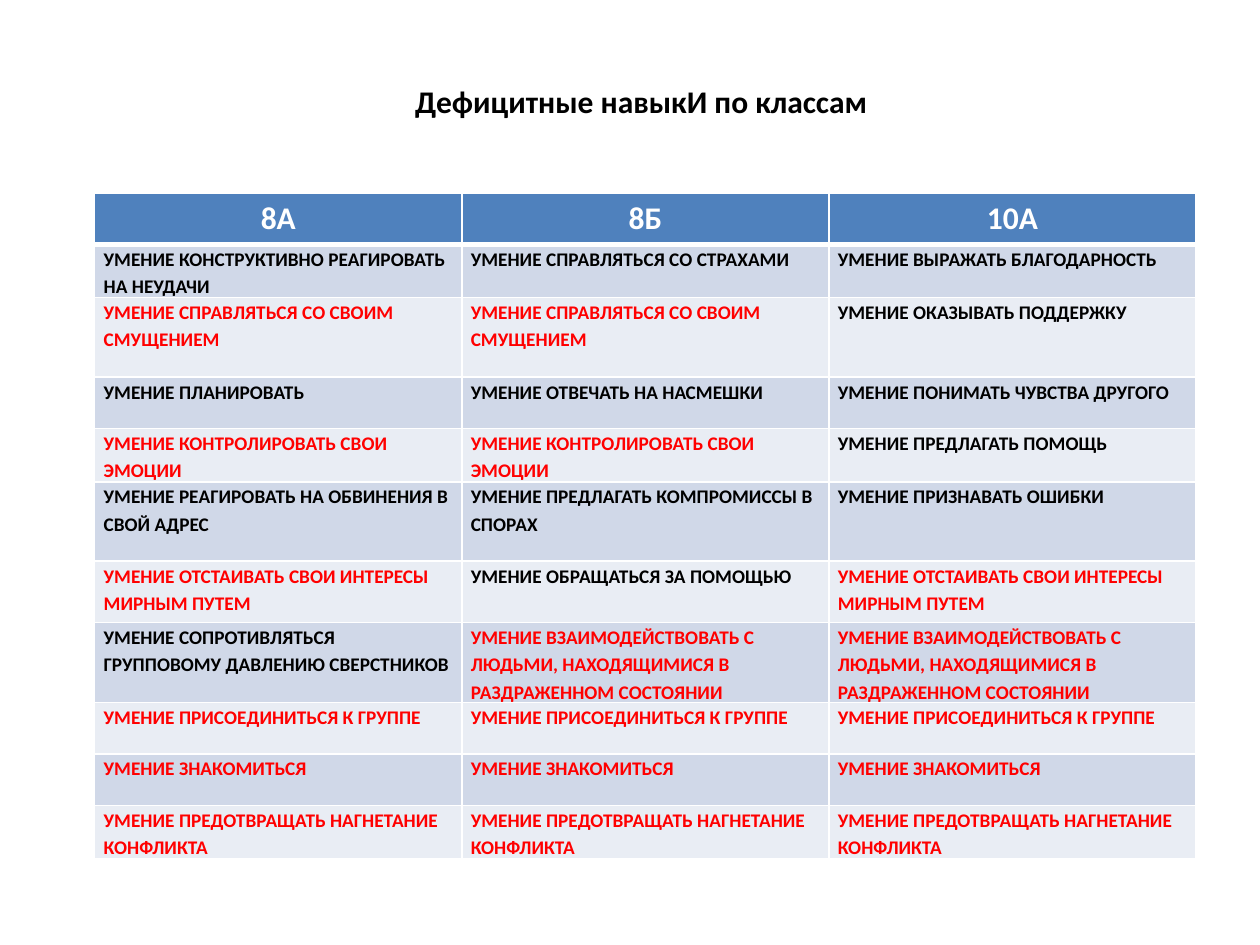
from collections import Counter

from lxml import etree
from pptx import Presentation
from pptx.dml.color import RGBColor
from pptx.enum.text import MSO_ANCHOR, MSO_AUTO_SIZE, PP_ALIGN
from pptx.oxml.ns import qn
from pptx.util import Cm, Pt

LEFT, CENTER = PP_ALIGN.LEFT, PP_ALIGN.CENTER
TOP, MIDDLE = MSO_ANCHOR.TOP, MSO_ANCHOR.MIDDLE
FIT_SHAPE = MSO_AUTO_SIZE.SHAPE_TO_FIT_TEXT

BLACK, WHITE, RED = "000000", "FFFFFF", "FF0000"
HEADER_FILL = "4F81BD"
BAND_FILLS = ("D0D8E8", "E9EDF4")
ROW_HEIGHT = 1.04
ROW_HEIGHTS = {2: 1.6, 5: 1.6, 6: 1.24, 7: 1.6}

CLASSES = ("8А", "8Б", "10А")
EMBARRASSMENT = "УМЕНИЕ СПРАВЛЯТЬСЯ СО СВОИМ СМУЩЕНИЕМ"
EMOTIONS = "УМЕНИЕ КОНТРОЛИРОВАТЬ СВОИ ЭМОЦИИ"
INTERESTS = "УМЕНИЕ ОТСТАИВАТЬ СВОИ ИНТЕРЕСЫ МИРНЫМ ПУТЕМ"
IRRITATED = "УМЕНИЕ ВЗАИМОДЕЙСТВОВАТЬ С ЛЮДЬМИ, НАХОДЯЩИМИСЯ В РАЗДРАЖЕННОМ СОСТОЯНИИ"
SKILLS = [
    ("УМЕНИЕ КОНСТРУКТИВНО РЕАГИРОВАТЬ НА НЕУДАЧИ",
     "УМЕНИЕ СПРАВЛЯТЬСЯ СО СТРАХАМИ",
     "УМЕНИЕ ВЫРАЖАТЬ БЛАГОДАРНОСТЬ"),
    (EMBARRASSMENT, EMBARRASSMENT, "УМЕНИЕ ОКАЗЫВАТЬ ПОДДЕРЖКУ"),
    ("УМЕНИЕ ПЛАНИРОВАТЬ",
     "УМЕНИЕ ОТВЕЧАТЬ НА НАСМЕШКИ",
     "УМЕНИЕ ПОНИМАТЬ ЧУВСТВА ДРУГОГО"),
    (EMOTIONS, EMOTIONS, "УМЕНИЕ ПРЕДЛАГАТЬ ПОМОЩЬ"),
    ("УМЕНИЕ РЕАГИРОВАТЬ НА ОБВИНЕНИЯ В СВОЙ АДРЕС",
     "УМЕНИЕ ПРЕДЛАГАТЬ КОМПРОМИССЫ В СПОРАХ",
     "УМЕНИЕ ПРИЗНАВАТЬ ОШИБКИ"),
    (INTERESTS, "УМЕНИЕ ОБРАЩАТЬСЯ ЗА ПОМОЩЬЮ", INTERESTS),
    ("УМЕНИЕ СОПРОТИВЛЯТЬСЯ ГРУППОВОМУ ДАВЛЕНИЮ СВЕРСТНИКОВ",
     IRRITATED, IRRITATED),
    ("УМЕНИЕ ПРИСОЕДИНИТЬСЯ К ГРУППЕ",) * 3,
    ("УМЕНИЕ ЗНАКОМИТЬСЯ",) * 3,
    ("УМЕНИЕ ПРЕДОТВРАЩАТЬ НАГНЕТАНИЕ КОНФЛИКТА",) * 3,
]


def rgb(color):
    return RGBColor.from_string(color)


def write(tf, text, size=11, color=BLACK, align=LEFT, spacing=1.0):
    p = tf.paragraphs[0]
    p.alignment = align
    p.line_spacing = spacing
    r = p.add_run()
    r.text = text
    r.font.name = "Calibri"
    r.font.size = Pt(size)
    r.font.bold = True
    r.font.color.rgb = rgb(color)


def set_borders(cell, top=1, bottom=1):
    tcPr = cell._tc.get_or_add_tcPr()
    for tag, width in (("lnL", 1), ("lnR", 1), ("lnT", top), ("lnB", bottom)):
        ln = etree.SubElement(tcPr, qn(f"a:{tag}"), w=str(Pt(width)))
        fill = etree.SubElement(ln, qn("a:solidFill"))
        etree.SubElement(fill, qn("a:srgbClr"), val=WHITE)


def paint(cell, color):
    cell.fill.solid()
    cell.fill.fore_color.rgb = rgb(color)


def add_title(s, left, top, width, height):
    sp = s.shapes.title
    sp.left, sp.top, sp.width, sp.height = Cm(left), Cm(top), Cm(width), Cm(height)
    tf = sp.text_frame
    tf.word_wrap = True
    tf.auto_size = FIT_SHAPE
    tf.vertical_anchor = MIDDLE
    write(tf, "Дефицитные навыкИ по классам ", size=18, align=CENTER)


def add_skills_table(s, left, top, width):
    heights = [ROW_HEIGHTS.get(i, ROW_HEIGHT) for i in range(len(SKILLS) + 1)]
    table = s.shapes.add_table(len(heights), len(CLASSES), Cm(left), Cm(top),
                               Cm(width), Cm(sum(heights))).table
    for column in table.columns:
        column.width = Cm(width / len(CLASSES))
    for row, height in zip(table.rows, heights):
        row.height = Cm(height)

    for j, name in enumerate(CLASSES):
        cell = table.cell(0, j)
        set_borders(cell, bottom=3)
        paint(cell, HEADER_FILL)
        write(cell.text_frame, name, size=18, color=WHITE, align=CENTER)

    counts = Counter(skill for row in SKILLS for skill in row)
    for i, row in enumerate(SKILLS, start=1):
        for j, skill in enumerate(row):
            cell = table.cell(i, j)
            set_borders(cell, top=3 if i == 1 else 1)
            paint(cell, BAND_FILLS[(i - 1) % 2])
            cell.margin_left = cell.margin_right = Cm(0.18)
            cell.margin_top = cell.margin_bottom = 0
            cell.vertical_anchor = TOP
            shared = counts[skill] > 1
            write(cell.text_frame, skill, color=RED if shared else BLACK, spacing=1.15)


def main():
    prs = Presentation()
    prs.slide_width, prs.slide_height = Cm(25.4), Cm(19.05)
    s = prs.slides.add_slide(prs.slide_layouts[5])
    add_title(s, 4.7, 1.52, 16.6, 1.02)
    add_skills_table(s, 1.91, 3.89, 22.2)
    prs.save("out.pptx")


if __name__ == "__main__":
    main()
